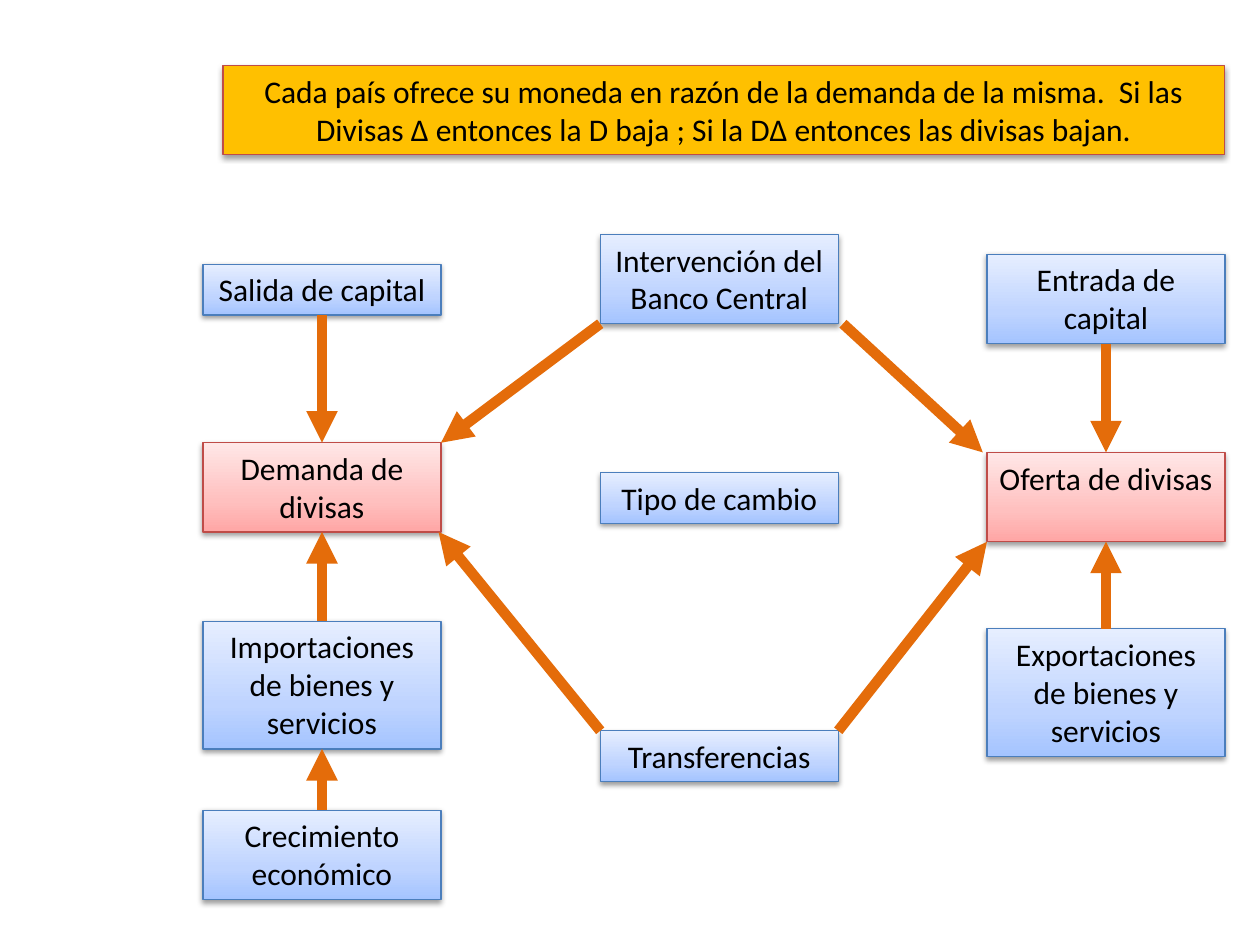
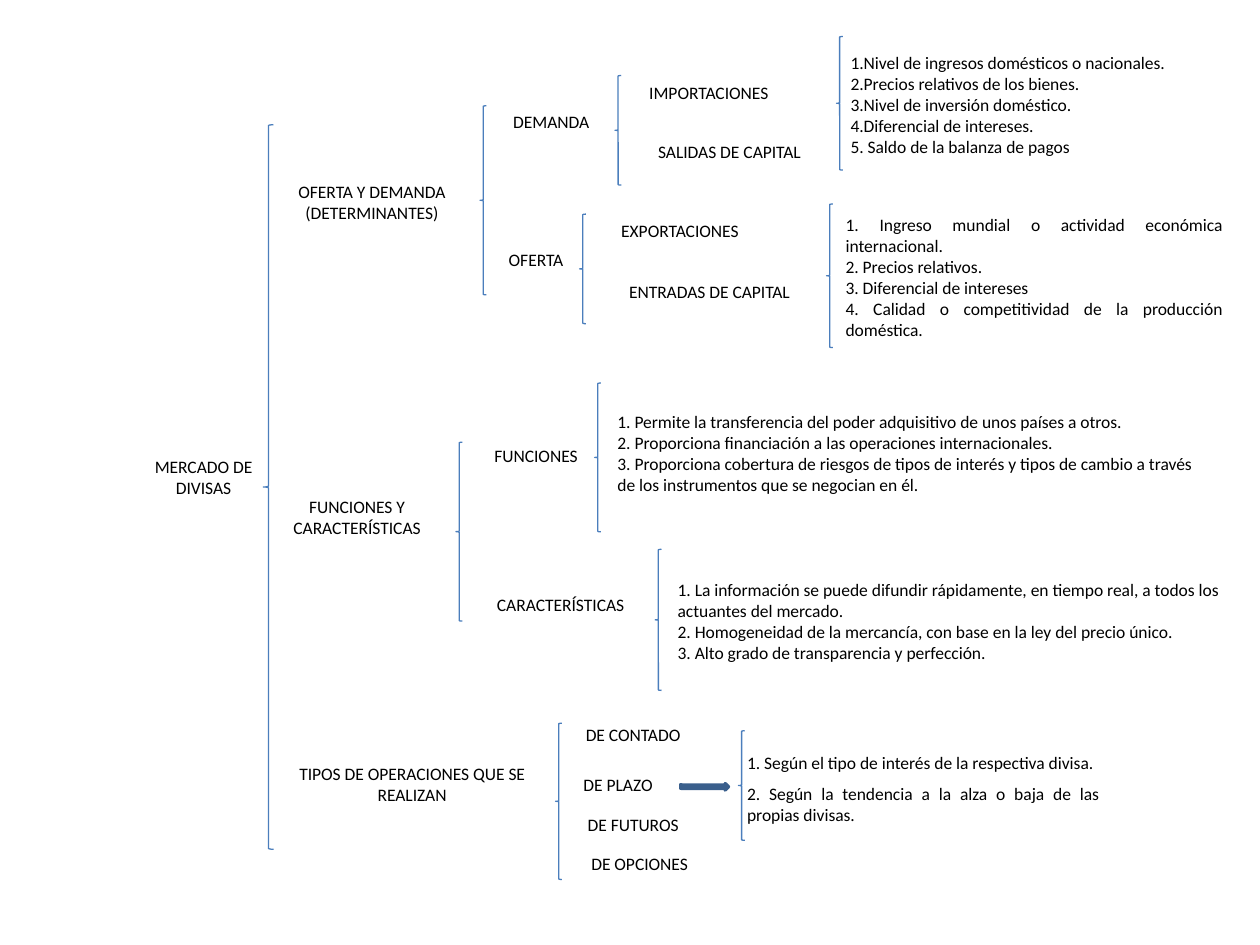
from dataclasses import dataclass

from lxml.etree import SubElement
from pptx import Presentation
from pptx.dml.color import RGBColor
from pptx.enum.shapes import MSO_CONNECTOR as Connector, MSO_SHAPE as Preset
from pptx.enum.text import MSO_ANCHOR as Anchor, MSO_AUTO_SIZE as AutoSize, PP_ALIGN as Align
from pptx.oxml.ns import qn
from pptx.shapes.autoshape import Shape
from pptx.slide import Slide
from pptx.util import Pt

FONT = "Calibri"
BLACK, ORANGE, AMBER = "000000", "E46C0A", "FFC000"
BLUE_EDGE, RED_EDGE = "4B7EBC", "BF4C48"
ARROW_BLUE, ARROW_EDGE = "4F81BD", "3A5F8C"
BLUE_STOPS = ((0, "A4C4FF"), (35, "BFD4FF"), (100, "E6EEFF"))
RED_STOPS = ((0, "FFA6A5"), (35, "FFC0BF"), (100, "FFE7E7"))
LEFT, CENTER, RIGHT = 116, 343, 564
BOX_WIDTH = 136
BOX_HEIGHTS = {1: 29, 2: 51, 3: 73}
TOP, BOTTOM = 0, 2


@dataclass(frozen=True)
class Factor:
    text: str
    left: float
    top: float
    lines: int
    is_market_side: bool = False


@dataclass(frozen=True)
class Branch:
    text: str
    left: float
    top: float
    width: float
    lines: int = 1
    align: Align = Align.CENTER
    gap: float = 0


@dataclass(frozen=True)
class Brace:
    left: float
    top: float
    height: float
    width: float = 3.6


FACTORS = (
    Factor("Intervención del Banco Central", CENTER, 134, 2),
    Factor("Salida de capital", LEFT, 151, 1),
    Factor("Demanda de divisas", LEFT, 253, 2, True),
    Factor("Importaciones de bienes y servicios", LEFT, 355, 3),
    Factor("Crecimiento económico", LEFT, 463, 2),
    Factor("Exportaciones de bienes y servicios", RIGHT, 359.3, 3),
    Factor("Oferta de divisas", RIGHT, 258.5, 2, True),
    Factor("Entrada de capital", RIGHT, 145.3, 2),
    Factor("Tipo de cambio", CENTER, 270, 1),
    Factor("Transferencias", CENTER, 417.6, 1),
)
DIAGONALS = (
    (343, 185, 252, 253),
    (481.7, 185, 561.6, 258.5),
    (343, 417.6, 250.6, 304),
    (479, 417.6, 564, 309.6),
)
FLOWS = (
    ("Salida de capital", BOTTOM, "Demanda de divisas", TOP),
    ("Entrada de capital", BOTTOM, "Oferta de divisas", TOP),
    ("Importaciones de bienes y servicios", TOP, "Demanda de divisas", BOTTOM),
    ("Crecimiento económico", TOP, "Importaciones de bienes y servicios", BOTTOM),
    ("Exportaciones de bienes y servicios", TOP, "Oferta de divisas", BOTTOM),
)
PREMISE = ("Cada país ofrece su moneda en razón de la demanda de la misma.  Si las "
           "Divisas ∆ entonces la D baja ; Si la D∆ entonces las divisas bajan.")

MARKET = Branch("MERCADO DE\nDIVISAS", 54, 257, 124.6, 2)
BRANCHES = (
    Branch("TIPOS DE OPERACIONES QUE SE\nREALIZAN", 142, 432.7, 187, 2),
    Branch("FUNCIONES Y\nCARACTERÍSTICAS", 119, 280, 170, 2),
    Branch("OFERTA Y DEMANDA\n(DETERMINANTES)", 119, 100, 187, 2),
    Branch("OFERTA", 244, 139, 124.6),
    Branch("DEMANDA", 247, 59.8, 136),
    Branch("FUNCIONES", 238.3, 250.6, 136),
    Branch("CARACTERÍSTICAS", 226.8, 336.2, 187),
    Branch("DE CONTADO", 289.4, 410.4, 144.7),
    Branch("DE PLAZO", 280.8, 438.5, 144.7),
    Branch("DE FUTUROS", 289.4, 461.5, 144.7),
    Branch("DE OPCIONES", 293.8, 483.8, 143.3),
    Branch("IMPORTACIONES", 345.6, 43.2, 118.8),
    Branch("SALIDAS DE CAPITAL", 329, 77, 175.7),
    Branch("EXPORTACIONES", 311.8, 122.4, 153.4),
    Branch("ENTRADAS DE CAPITAL", 311.8, 157, 187.2),
    Branch("1. Según el tipo de interés de la respectiva divisa.\n"
           "2. Según la tendencia a la alza o baja de las propias divisas.",
           419.8, 426.2, 215.3, 3, Align.JUSTIFY, 5.8),
)
LISTS = (
    Branch("1.Nivel de ingresos domésticos o nacionales.\n"
           "2.Precios relativos de los bienes.\n"
           "3.Nivel de inversión doméstico.\n"
           "4.Diferencial de intereses.\n"
           "5. Saldo de la balanza de pagos",
           478.8, 25.9, 240, 5, Align.JUSTIFY),
    Branch("1. Ingreso mundial o actividad económica internacional.\n"
           "2. Precios relativos.\n"
           "3. Diferencial de intereses\n"
           "4. Calidad o competitividad de la producción doméstica.",
           476, 118.8, 229.7, 6, Align.JUSTIFY),
    Branch("1. Permite la transferencia del poder adquisitivo de unos países a otros.\n"
           "2. Proporciona financiación a las operaciones internacionales.\n"
           "3. Proporciona cobertura de riesgos de tipos de interés y tipos de cambio "
           "a través de los instrumentos que se negocian en él.",
           345.6, 231.4, 348.5, 4, Align.LEFT),
    Branch("1. La información se puede difundir rápidamente, en tiempo real, a todos "
           "los actuantes del mercado.\n"
           "2. Homogeneidad de la mercancía, con base en la ley del precio único.\n"
           "3. Alto grado de transparencia y perfección.",
           380, 327, 338.4, 4, Align.LEFT),
)
BRACES = (
    Brace(150.5, 71.3, 414, 5.8),
    Brace(317.5, 413.3, 89.3),
    Brace(260.6, 252.7, 102.2),
    Brace(274.3, 60.5, 108),
    Brace(422, 417.6, 62.6),
    Brace(339.8, 218.9, 85),
    Brace(374.4, 313.9, 80.6),
    Brace(351.4, 43.2, 62.6),
    Brace(331.2, 122.4, 62.6),
    Brace(478, 20.9, 76.3),
    Brace(472.3, 116.6, 82),
)


def rgb(value: str) -> RGBColor:
    return RGBColor.from_string(value)


def place(shape: Shape, left: float, top: float, width: float, height: float) -> None:
    shape.left, shape.top = Pt(left), Pt(top)
    shape.width, shape.height = Pt(width), Pt(height)


def outline(shape: Shape, color: str, width: float = 0.75) -> None:
    shape.line.color.rgb = rgb(color)
    shape.line.width = Pt(width)


def write(shape: Shape, text: str, size: float, align: Align = Align.CENTER,
          gap: float = 0) -> None:
    frame = shape.text_frame
    frame.text = text
    frame.word_wrap = True
    frame.auto_size = AutoSize.NONE
    frame.vertical_anchor = Anchor.TOP
    frame.margin_left = frame.margin_right = Pt(7.2)
    frame.margin_top = frame.margin_bottom = Pt(3.6)
    for position, paragraph in enumerate(frame.paragraphs):
        properties = paragraph._p.get_or_add_pPr()
        properties.set("marL", "0")
        properties.set("indent", "0")
        SubElement(properties, qn("a:buNone"))
        paragraph.alignment = align
        paragraph.space_before = Pt(gap if position else 0)
        for run in paragraph.runs:
            run.font.name = FONT
            run.font.size = Pt(size)
            run.font.bold = False
            run.font.color.rgb = rgb(BLACK)


def fill_gradient(shape: Shape, stops: tuple[tuple[int, str], ...]) -> None:
    shape.fill.gradient()
    shape.fill.gradient_angle = 90
    stop_list = shape._element.spPr.find(qn("a:gradFill")).find(qn("a:gsLst"))
    for old_stop in list(stop_list):
        stop_list.remove(old_stop)
    for position, color in stops:
        stop = SubElement(stop_list, qn("a:gs"), pos=str(position * 1000))
        SubElement(stop, qn("a:srgbClr"), val=color)


def cast_shadow(shape: Shape) -> None:
    shape.shadow.inherit = False
    effects = shape._element.spPr.find(qn("a:effectLst"))
    shadow = SubElement(effects, qn("a:outerShdw"), blurRad=str(Pt(3.1)),
                        dist=str(Pt(1.6)), dir="5400000", rotWithShape="0")
    color = SubElement(shadow, qn("a:srgbClr"), val=BLACK)
    SubElement(color, qn("a:alpha"), val="38000")


def add_preset(slide: Slide, preset: Preset, left: float, top: float,
               width: float, height: float) -> Shape:
    shape = slide.shapes.add_shape(preset, Pt(left), Pt(top), Pt(width), Pt(height))
    shape.shadow.inherit = False
    return shape


def add_factor(slide: Slide, factor: Factor) -> Shape:
    box = add_preset(slide, Preset.RECTANGLE, factor.left, factor.top,
                     BOX_WIDTH, BOX_HEIGHTS[factor.lines])
    fill_gradient(box, RED_STOPS if factor.is_market_side else BLUE_STOPS)
    outline(box, RED_EDGE if factor.is_market_side else BLUE_EDGE)
    cast_shadow(box)
    write(box, factor.text, 18)
    return box


def add_arrow(slide: Slide, x1: float = 0, y1: float = 0, x2: float = 0, y2: float = 0):
    arrow = slide.shapes.add_connector(Connector.STRAIGHT, Pt(x1), Pt(y1), Pt(x2), Pt(y2))
    outline(arrow, ORANGE, 6)
    properties = arrow._element.spPr
    SubElement(properties.find(qn("a:ln")), qn("a:tailEnd"), type="triangle")
    SubElement(properties, qn("a:effectLst"))
    return arrow


def fill_branch(shape: Shape, branch: Branch) -> None:
    place(shape, branch.left, branch.top, branch.width, 7.2 + 12.2 * branch.lines)
    write(shape, branch.text, 10, branch.align, branch.gap)


def build_exchange_rate(deck) -> None:
    slide = deck.slides.add_slide(deck.slide_layouts[5])
    boxes = {factor.text: add_factor(slide, factor) for factor in FACTORS}
    for ends in DIAGONALS:
        add_arrow(slide, *ends)
    for source, source_side, target, target_side in FLOWS:
        flow = add_arrow(slide)
        flow.begin_connect(boxes[source], source_side)
        flow.end_connect(boxes[target], target_side)
    premise = slide.shapes.title
    place(premise, 127.4, 37.4, 572.4, 51)
    premise.fill.solid()
    premise.fill.fore_color.rgb = rgb(AMBER)
    outline(premise, RED_EDGE)
    cast_shadow(premise)
    write(premise, PREMISE, 18)


def build_market_map(deck) -> None:
    slide = deck.slides.add_slide(deck.slide_layouts[4])
    fill_branch(slide.shapes.title, MARKET)
    bodies = [item for item in slide.placeholders if item.placeholder_format.idx > 0]
    for body, details in zip(bodies, LISTS):
        fill_branch(body, details)
    for branch in BRANCHES:
        fill_branch(slide.shapes.add_textbox(0, 0, 0, 0), branch)
    for brace in BRACES:
        bracket = add_preset(slide, Preset.LEFT_BRACE, brace.left, brace.top,
                             brace.width, brace.height)
        bracket.fill.background()
        outline(bracket, BLUE_EDGE)
    term_arrow = add_preset(slide, Preset.STRIPED_RIGHT_ARROW, 388.8, 447.8, 27.4, 3.6)
    term_arrow.fill.solid()
    term_arrow.fill.fore_color.rgb = rgb(ARROW_BLUE)
    outline(term_arrow, ARROW_EDGE, 2)


def main() -> None:
    deck = Presentation()
    deck.slide_width, deck.slide_height = Pt(720), Pt(540)
    build_exchange_rate(deck)
    build_market_map(deck)
    deck.save("out.pptx")


if __name__ == "__main__":
    main()
